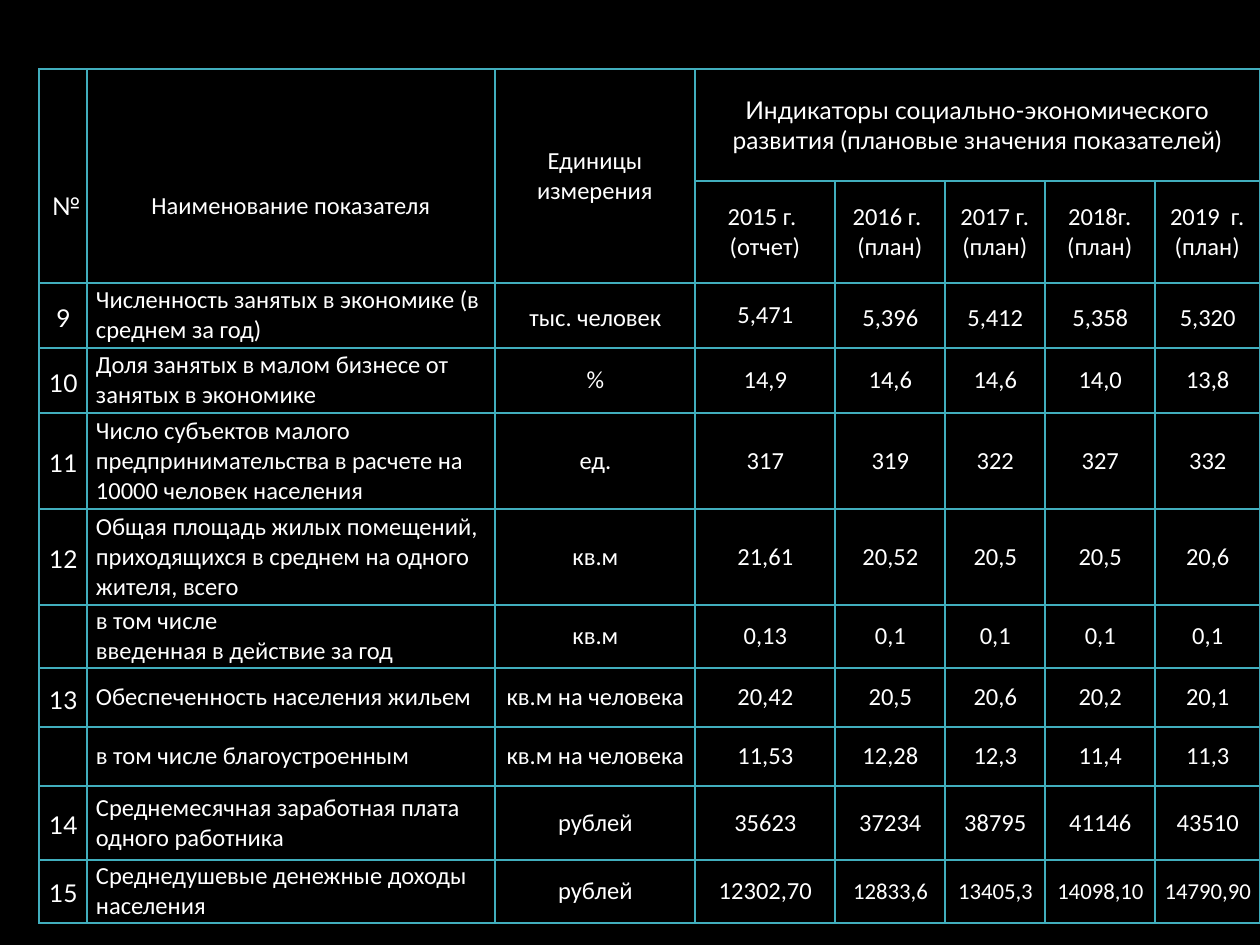
from lxml.etree import SubElement
from pptx import Presentation
from pptx.dml.color import RGBColor
from pptx.enum.text import MSO_ANCHOR, PP_ALIGN
from pptx.oxml.ns import qn
from pptx.util import Pt

PX = 914400 / 126
COLORS = {"background": "000000", "text": "FFFFFF", "border": "41AEBD"}
COLUMN_WIDTHS = [48, 408, 200, 140, 110, 100, 110, 105]
ROW_HEIGHTS = [112, 102, 65, 65, 96, 96, 63, 59, 59, 74, 63]
HEADER_MARGINS = (13, 6, 13, 6)
LOWERED_MARGINS = (13, 66, 13, 6)
BODY_MARGINS = (9, 0, 8, 0)

YEARS = ["2015 г. \n(отчет)", "2016 г.  (план)", "2017 г. (план)",
         "2018г. (план)", "2019  г. (план)"]
INDICATORS = [
    ("9", "Численность занятых в экономике (в среднем за год)", "тыс. человек",
     "5,471", "5,396", "5,412", "5,358", "5,320"),
    ("10", "Доля занятых в малом бизнесе от занятых в экономике", "%",
     "14,9", "14,6", "14,6", "14,0", "13,8"),
    ("11", "Число субъектов малого предпринимательства в расчете на 10000 человек населения",
     "ед.", "317", "319", "322", "327", "332"),
    ("12", "Общая площадь жилых помещений, приходящихся в среднем на одного жителя, всего",
     "кв.м", "21,61", "20,52", "20,5", "20,5", "20,6"),
    ("", "в том числе\nвведенная в действие за год", "кв.м",
     "0,13", "0,1", "0,1", "0,1", "0,1"),
    ("13", "Обеспеченность населения жильем", "кв.м на человека",
     "20,42", "20,5", "20,6", "20,2", "20,1"),
    ("", "в том числе благоустроенным", "кв.м на человека",
     "11,53", "12,28", "12,3", "11,4", "11,3"),
    ("14", "Среднемесячная заработная плата одного работника", "рублей",
     "35623", "37234", "38795", "41146", "43510"),
    ("15", "Среднедушевые денежные доходы населения", "рублей",
     "12302,70", "12833,6", "13405,3", "14098,10", "14790,90"),
]


def px(length):
    return round(length * PX)


def color(name):
    return RGBColor.from_string(COLORS[name])


def write(cell, text, font="Calibri", size=14, align=PP_ALIGN.CENTER,
          spacing=None, margins=BODY_MARGINS):
    cell.vertical_anchor = MSO_ANCHOR.MIDDLE
    (cell.margin_left, cell.margin_top,
     cell.margin_right, cell.margin_bottom) = map(px, margins)
    cell.text = text
    for paragraph in cell.text_frame.paragraphs:
        paragraph.alignment = align
        paragraph.line_spacing = spacing
        paragraph.font.size = Pt(size)
        for run in paragraph.runs:
            run.font.name = font
            run.font.size = Pt(size)
            run.font.color.rgb = color("text")


def style_cell(cell):
    properties = cell._tc.get_or_add_tcPr()
    for side in ("a:lnL", "a:lnR", "a:lnT", "a:lnB"):
        line = SubElement(properties, qn(side), w=str(Pt(1)))
        fill = SubElement(line, qn("a:solidFill"))
        SubElement(fill, qn("a:srgbClr"), val=COLORS["border"])
    cell.fill.background()


def fill_header(table):
    for column in range(3):
        table.cell(0, column).merge(table.cell(1, column))
    table.cell(0, 3).merge(table.cell(0, 7))
    write(table.cell(0, 0), "№", font="Lato", margins=LOWERED_MARGINS)
    write(table.cell(0, 1), "Наименование показателя", margins=LOWERED_MARGINS)
    write(table.cell(0, 2), "Единицы\nизмерения", margins=HEADER_MARGINS)
    write(table.cell(0, 3), "Индикаторы социально-экономического\n"
          "развития (плановые значения показателей)",
          font="Lato", margins=HEADER_MARGINS)
    for column, year in enumerate(YEARS, 3):
        write(table.cell(1, column), year, margins=HEADER_MARGINS)


def fill_indicators(table):
    for row, indicator in enumerate(INDICATORS, 2):
        first, last = row == 2, row == len(INDICATORS) + 1
        for column, text in enumerate(indicator):
            # The number column and most of the first row are set looser
            loose = column == 0 or (first and column not in (1, 3))
            write(table.cell(row, column), text,
                  font="Lato" if column == 0 else "Calibri",
                  size=13 if last and column > 3 else 14,
                  align=PP_ALIGN.LEFT if column == 1 else PP_ALIGN.CENTER,
                  spacing=1.15 if loose else None)


def add_indicator_table(slide, left, top):
    table = slide.shapes.add_table(
        len(ROW_HEIGHTS), len(COLUMN_WIDTHS), px(left), px(top),
        px(sum(COLUMN_WIDTHS)), px(sum(ROW_HEIGHTS))).table
    table.first_row = table.horz_banding = False
    for column, width in zip(table.columns, COLUMN_WIDTHS):
        column.width = px(width)
    for row, height in zip(table.rows, ROW_HEIGHTS):
        row.height = px(height)
    for cell in table.iter_cells():
        style_cell(cell)
    fill_header(table)
    fill_indicators(table)


def main():
    deck = Presentation()
    deck.slide_width, deck.slide_height = px(1260), px(945)
    slide = deck.slides.add_slide(deck.slide_layouts[6])
    slide.background.fill.solid()
    slide.background.fill.fore_color.rgb = color("background")
    add_indicator_table(slide, 39, 69)
    deck.save("out.pptx")


if __name__ == "__main__":
    main()
